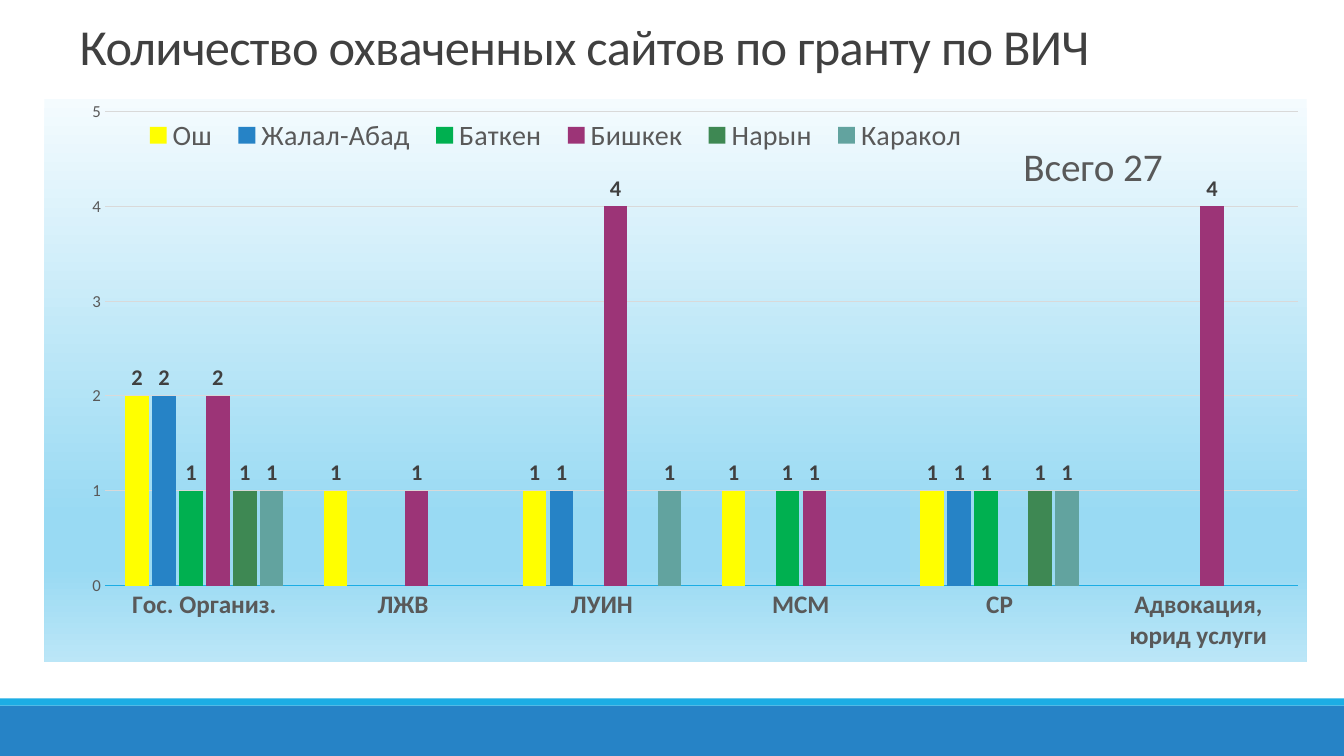
from lxml import etree
from pptx import Presentation
from pptx import util as u
from pptx.chart.data import CategoryChartData
from pptx.dml.color import RGBColor
from pptx.enum import chart as charts, shapes, text
from pptx.oxml import parse_xml
from pptx.oxml.ns import nsdecls, qn

FONT = "Calibri"
COLORS = {"title": "404040", "text": "595959", "grid": "D9D9D9",
          "band": "2683C6", "stripe": "1CADE4"}
BACKGROUND_STOPS = [(0, "F4FBFE"), (74, "99DAF3"), (83, "99DAF3"), (100, "BBE6F7")]
CATEGORIES = ["Гос. Организ.", "ЛЖВ", "ЛУИН", "МСМ", "СР", "Адвокация, юрид услуги"]
REGIONS = [
    ("Ош", "FFFF00", [2, 1, 1, 1, 1, None]),
    ("Жалал-Абад", "2683C6", [2, None, 1, None, 1, None]),
    ("Баткен", "00B050", [1, None, None, 1, 1, None]),
    ("Бишкек", "9C3477", [2, 1, 4, 1, None, 4]),
    ("Нарын", "3E8853", [1, None, None, None, 1, None]),
    ("Каракол", "62A39F", [1, None, 1, None, 1, None]),
]


def style_font(font, size, color, bold=False):
    font.name, font.size, font.bold = FONT, u.Pt(size), bold
    font.color.rgb = RGBColor.from_string(color)


def place_in_chart(element, x, y, width=None, height=None, inner=False):
    """Give a chart part a manual layout, in shares of the chart's size."""
    for old in element.findall(qn("c:layout")):
        element.remove(old)
    layout = parse_xml(f"<c:layout {nsdecls('c')}><c:manualLayout/></c:layout>")
    settings = [("layoutTarget", "inner" if inner else None),
                ("xMode", "edge"), ("yMode", "edge"),
                ("x", x), ("y", y), ("w", width), ("h", height)]
    for tag, value in settings:
        if value is not None:
            etree.SubElement(layout[0], qn(f"c:{tag}")).set("val", str(value))
    overlay = element.find(qn("c:overlay"))
    if overlay is None:
        element.insert(0, layout)
    else:
        overlay.addprevious(layout)


presentation = Presentation()
presentation.slide_width, presentation.slide_height = u.Inches(13.33), u.Inches(7.5)
slide = presentation.slides.add_slide(presentation.slide_layouts[5])

# Footer bands
for color, top, height in [("band", 7, 0.5), ("stripe", 6.93, 0.07)]:
    band = slide.shapes.add_shape(shapes.MSO_SHAPE.RECTANGLE, 0, u.Inches(top),
                                  presentation.slide_width, u.Inches(height))
    band.shadow.inherit = False
    band.fill.solid()
    band.fill.fore_color.rgb = RGBColor.from_string(COLORS[color])
    band.line.fill.background()

# Title
title = slide.shapes.title
title.left, title.top = u.Inches(0.69), 0
title.width, title.height = u.Inches(11.51), u.Inches(0.8)
title.text_frame.text = "Количество охваченных сайтов по гранту по ВИЧ"
title.text_frame.vertical_anchor = text.MSO_ANCHOR.BOTTOM
paragraph = title.text_frame.paragraphs[0]
paragraph.alignment = text.PP_ALIGN.LEFT
paragraph.line_spacing = 0.85
style_font(paragraph.runs[0].font, 36, COLORS["title"])
paragraph.runs[0].font._element.set("spc", "-50")

# Chart
data = CategoryChartData()
data.categories = CATEGORIES
for name, _, values in REGIONS:
    data.add_series(name, values)
chart = slide.shapes.add_chart(
    charts.XL_CHART_TYPE.COLUMN_CLUSTERED, u.Inches(0.44), u.Inches(0.98),
    u.Inches(12.52), u.Inches(5.59), data).chart
style_font(chart.font, 10, "000000")
stops = "".join(f'<a:gs pos="{position * 1000}"><a:srgbClr val="{color}"/></a:gs>'
                for position, color in BACKGROUND_STOPS)
chart._chartSpace.find(qn("c:chart")).addnext(parse_xml(
    f"<c:spPr {nsdecls('c', 'a')}><a:gradFill><a:gsLst>{stops}</a:gsLst>"
    '<a:lin ang="5400000" scaled="0"/></a:gradFill><a:ln><a:noFill/></a:ln></c:spPr>'))

plot = chart.plots[0]
plot.gap_width, plot.overlap, plot.vary_by_categories = 173, -15, False
for series, (_, color, _) in zip(plot.series, REGIONS):
    series.format.fill.solid()
    series.format.fill.fore_color.rgb = RGBColor.from_string(color)
    series.invert_if_negative = False
    labels = series.data_labels
    labels.show_value = True
    labels.position = charts.XL_LABEL_POSITION.OUTSIDE_END
    style_font(labels.font, 16, COLORS["title"], bold=True)

# Axes
category_axis, value_axis = chart.category_axis, chart.value_axis
for axis, size, bold in [(category_axis, 18, True), (value_axis, 12, False)]:
    axis.major_tick_mark = axis.minor_tick_mark = charts.XL_TICK_MARK.NONE
    style_font(axis.tick_labels.font, size, COLORS["text"], bold)
value_axis.minimum_scale, value_axis.maximum_scale, value_axis.major_unit = 0, 5, 1
value_axis.format.line.fill.background()
for line, color in [(category_axis.format.line, "stripe"),
                    (value_axis.major_gridlines.format.line, "grid")]:
    line.width = u.Pt(0.75)
    line.color.rgb = RGBColor.from_string(COLORS[color])

# Total and legend
chart.has_title = True
total = chart.chart_title.text_frame
total.text = "Всего 27"
style_font(total.paragraphs[0].runs[0].font, 28, COLORS["text"])
chart.has_legend = True
chart.legend.position = charts.XL_LEGEND_POSITION.TOP
chart.legend.include_in_layout = False
style_font(chart.legend.font, 20, COLORS["text"])

place_in_chart(chart._chartSpace.chart.plotArea, 0.048, 0.023, 0.945, 0.841, inner=True)
place_in_chart(chart.legend._element, 0.07, 0.03, 0.67, 0.07)
place_in_chart(chart.chart_title._element, 0.77, 0.06)

presentation.save("out.pptx")
